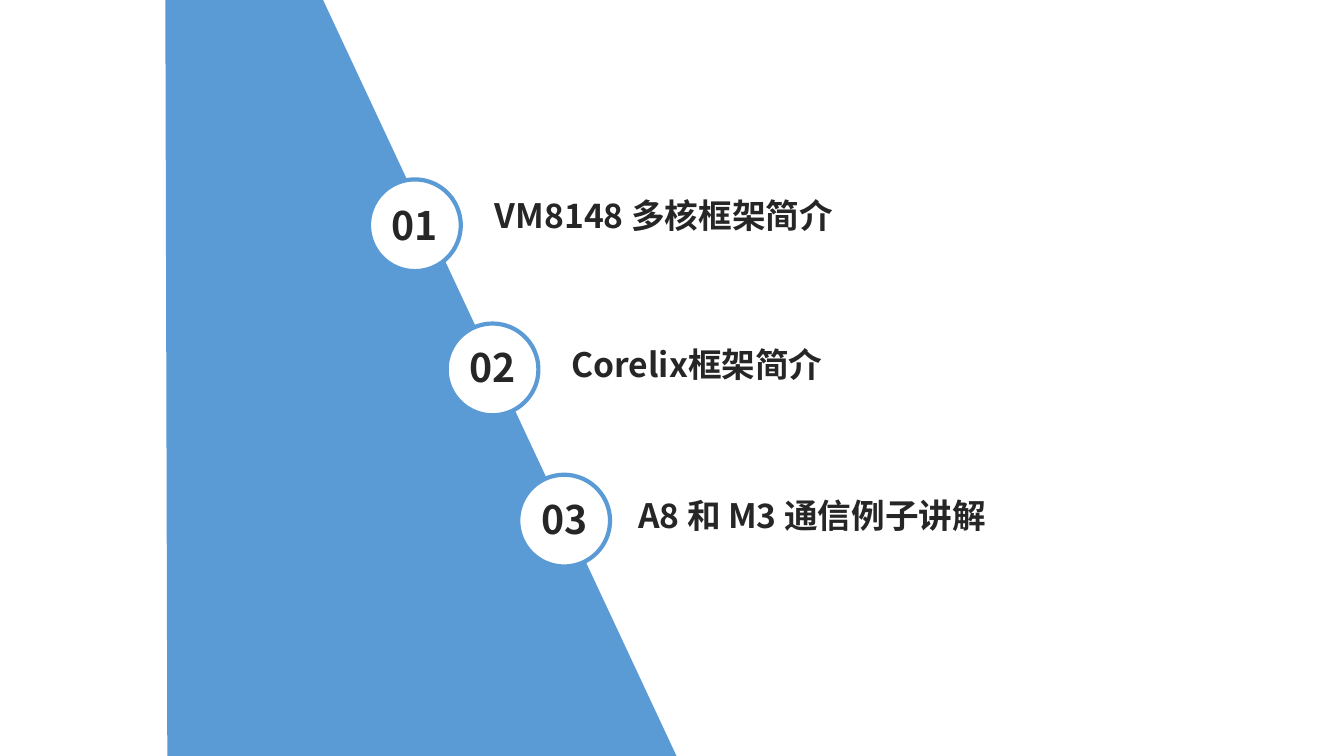
from dataclasses import dataclass

from lxml import etree
from pptx import Presentation
from pptx.dml.color import RGBColor
from pptx.enum.shapes import MSO_SHAPE
from pptx.enum.text import MSO_AUTO_SIZE, PP_ALIGN
from pptx.oxml.ns import qn
from pptx.shapes.shapetree import GroupShapes, SlideShapes
from pptx.slide import Slide
from pptx.util import Inches, Pt

BLUE = RGBColor(0x5B, 0x9B, 0xD5)
WHITE = RGBColor(0xFF, 0xFF, 0xFF)
DARK = RGBColor(0x26, 0x26, 0x26)
FONT = "Noto Sans CJK SC"
ELLIPSE = MSO_SHAPE.OVAL
LEFT = PP_ALIGN.LEFT
CENTER = PP_ALIGN.CENTER
FIT_SHAPE = MSO_AUTO_SIZE.SHAPE_TO_FIT_TEXT

BADGE_SIZE = 0.91
NUMBER_WIDTH = 0.74
PANEL_POINTS = [(6.71, 7.5), (3.2, -0.01), (1.64, -0.01), (1.66, 7.54)]


@dataclass(frozen=True)
class AgendaItem:
    title: str
    badge_left: float
    badge_top: float
    number_top: float
    title_left: float
    title_top: float
    title_width: float


AGENDA = [
    AgendaItem("VM8148 多核框架简介", 3.66, 1.78, 1.95, 4.81, 1.88, 6.11),
    AgendaItem("Corelix框架简介", 4.43, 3.21, 3.36, 5.57, 3.36, 5.47),
    AgendaItem("A8 和 M3 通信例子讲解", 5.14, 4.71, 4.86, 6.23, 4.86, 5.47),
]


def add_text(shapes: SlideShapes | GroupShapes, text: str, *, left: float, top: float,
             width: float, height: float, size: int, align: PP_ALIGN = LEFT) -> None:
    """Add a bold, wrapping text box."""
    box = shapes.add_textbox(Inches(left), Inches(top), Inches(width), Inches(height))
    frame = box.text_frame
    frame.word_wrap = True
    frame.auto_size = FIT_SHAPE
    paragraph = frame.paragraphs[0]
    paragraph.alignment = align
    run = paragraph.add_run()
    run.text = text
    run.font.size = Pt(size)
    run.font.bold = True
    run.font.color.rgb = DARK
    run.font.name = FONT
    # Chinese characters take the East Asian typeface
    properties = run.font._element
    etree.SubElement(properties, qn("a:ea")).set("typeface", FONT)


def add_panel(slide: Slide) -> None:
    """Draw the slanted blue panel."""
    points = [(Inches(x), Inches(y)) for x, y in PANEL_POINTS]
    builder = slide.shapes.build_freeform(*points[0])
    builder.add_line_segments(points[1:], close=True)
    panel = builder.convert_to_shape()
    panel.shadow.inherit = False
    panel.fill.solid()
    panel.fill.fore_color.rgb = BLUE
    panel.line.fill.background()


def add_badge(slide: Slide, item: AgendaItem, number: int) -> None:
    """Draw a ringed circle grouped with its number."""
    shapes = slide.shapes.add_group_shape().shapes
    circle = shapes.add_shape(ELLIPSE, Inches(item.badge_left), Inches(item.badge_top),
                              Inches(BADGE_SIZE), Inches(BADGE_SIZE))
    circle.shadow.inherit = False
    circle.fill.solid()
    circle.fill.fore_color.rgb = WHITE
    circle.line.color.rgb = BLUE
    circle.line.width = Pt(3)
    number_left = item.badge_left + (BADGE_SIZE - NUMBER_WIDTH) / 2
    add_text(shapes, f"{number:02d}", left=number_left, top=item.number_top,
             width=NUMBER_WIDTH, height=0.6, size=28, align=CENTER)


def main() -> None:
    presentation = Presentation()
    presentation.slide_width = Inches(13.33)
    presentation.slide_height = Inches(7.5)
    slide = presentation.slides.add_slide(presentation.slide_layouts[6])

    add_panel(slide)

    # Agenda entries along the slanted edge
    for number, item in enumerate(AGENDA, start=1):
        add_badge(slide, item, number)
        add_text(slide.shapes, item.title, left=item.title_left, top=item.title_top,
                 width=item.title_width, height=0.5, size=24)

    presentation.save("out.pptx")


if __name__ == "__main__":
    main()
